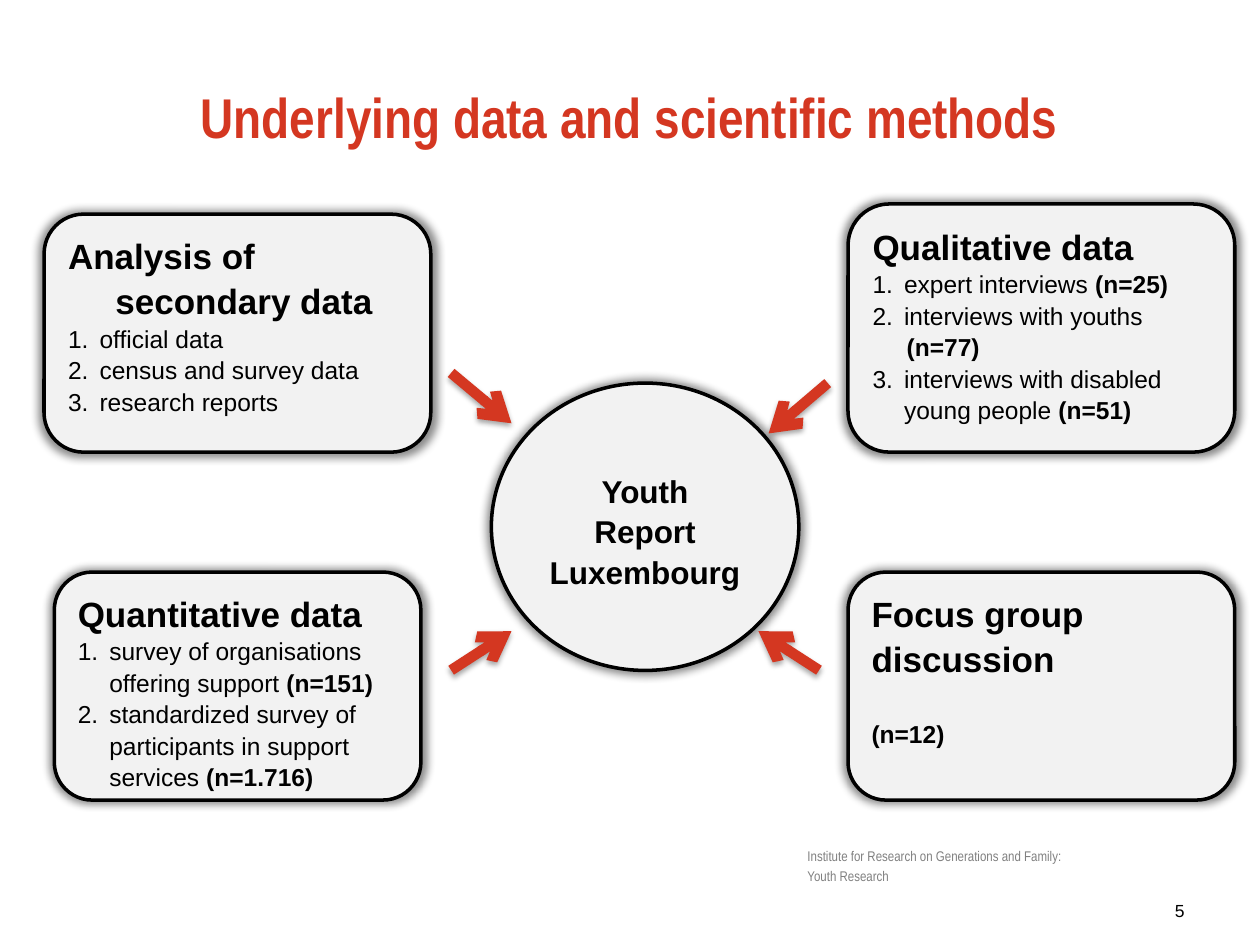
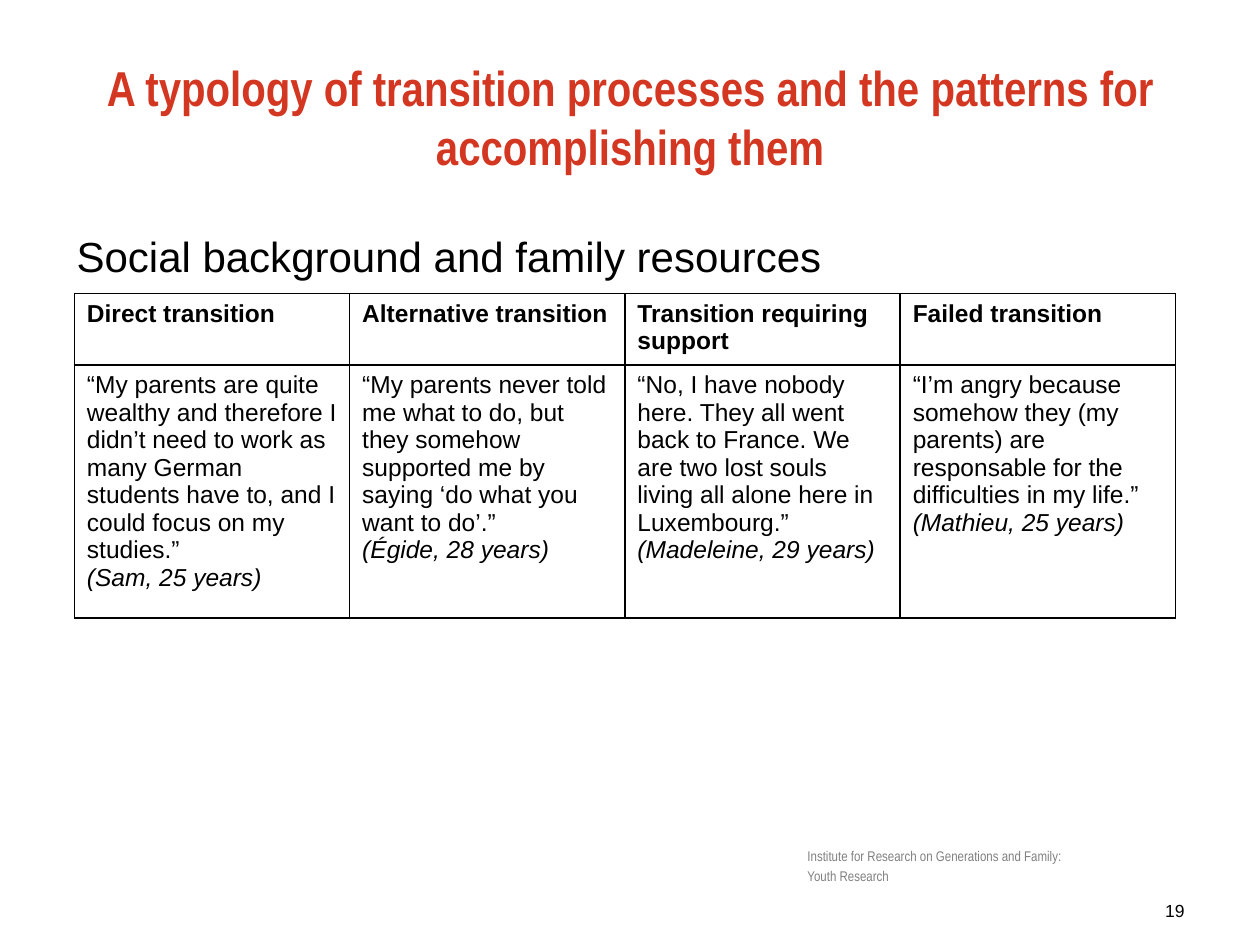
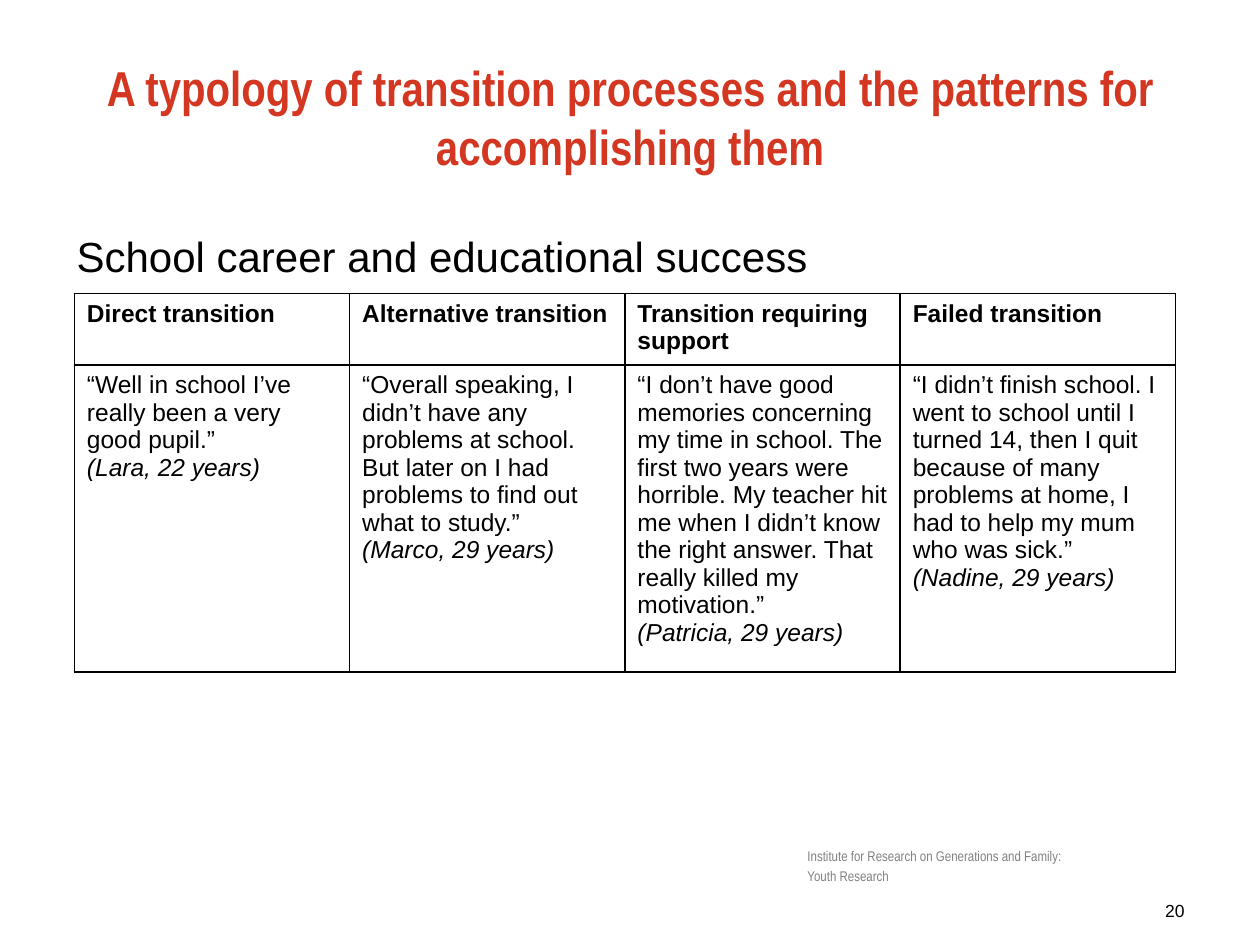
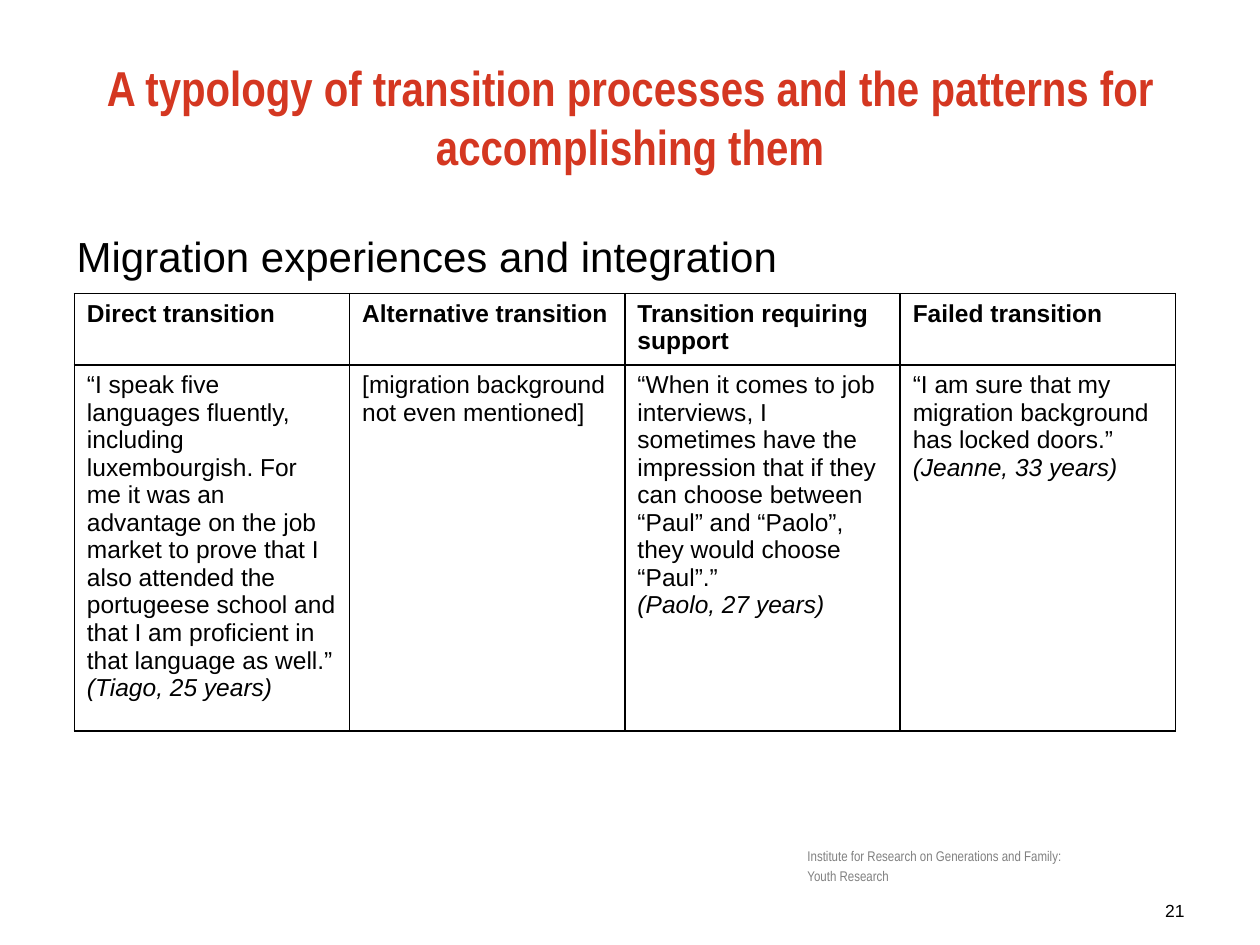
from lxml import etree
from pptx import Presentation
from pptx.dml.color import RGBColor
from pptx.enum.shapes import MSO_CONNECTOR as CONNECTOR, MSO_SHAPE as SHAPE
from pptx.enum.text import MSO_ANCHOR as ANCHOR, PP_ALIGN as ALIGN
from pptx.oxml import parse_xml
from pptx.oxml.ns import nsdecls, qn
from pptx.util import Pt

COLORS = {
    "accent": "D43721",
    "panel": "F2F2F2",
    "text": "000000",
    "footer": "808080",
}
BODY_FONT = "Arial"
NARROW_FONT = "Arial Narrow"
LOOSE = 1.07
HANGING = 18

TYPOLOGY_TITLE = "A typology of transition processes and the patterns for accomplishing them"
TRANSITIONS = [
    "Direct transition", "Alternative transition",
    "Transition requiring support", "Failed transition",
]
# Each topic: page number, heading, height of the quote row, (quote, speaker) per transition
TOPICS = [
    (19, "Social background and family resources", 144.5, [
        ("“My parents are quite wealthy and therefore I didn’t need to work as many German "
         "students have to, and I could focus on my studies.”", "(Sam, 25 years)"),
        ("“My parents never told me what to do, but they somehow supported me by saying "
         "‘do what you want to do’.”", "(Égide, 28 years)"),
        ("“No, I have nobody here. They all went back to France. We are two lost souls "
         "living all alone here in Luxembourg.”", "(Madeleine, 29 years)"),
        ("“I’m angry because somehow they (my parents) are responsable for the "
         "difficulties in my life.”", "(Mathieu, 25 years)"),
    ]),
    (20, "School career and educational success", 164.5, [
        ("“Well in school I’ve really been a very good pupil.”", "(Lara, 22 years)"),
        ("“Overall speaking, I didn’t have any problems at school. But later on I had "
         "problems to find out what to study.”", "(Marco, 29 years)"),
        ("“I don’t have good memories concerning my time in school. The first two years "
         "were horrible. My teacher hit me when I didn’t know the right answer. That "
         "really killed my motivation.”", "(Patricia, 29 years)"),
        ("“I didn’t finish school. I went to school until I turned 14, then I quit because "
         "of many problems at home, I had to help my mum who was sick.”",
         "(Nadine, 29 years)"),
    ]),
    (21, "Migration experiences and integration", 196, [
        ("“I speak five languages fluently, including luxembourgish. For me it was an "
         "advantage on the job market to prove that I also attended the portugeese school "
         "and that I am proficient in that language as well.”", "(Tiago, 25 years)"),
        ("[migration background not even mentioned]", ""),
        ("“When it comes to job interviews, I sometimes have the impression that if they "
         "can choose between “Paul” and “Paolo”, they would choose “Paul”.”",
         "(Paolo, 27 years)"),
        ("“I am sure that my migration background has locked doors.”",
         "(Jeanne, 33 years)"),
    ]),
]


def rgb(name):
    return RGBColor.from_string(COLORS[name])


def add_text(frame, text, size=14, font=BODY_FONT, color="text", bold=False, italic=False,
             bold_end="", align=ALIGN.LEFT, spacing=None, before=None, left=0, first=0,
             number=None):
    """Add a paragraph; bold_end is a closing bold run, number starts automatic numbering."""
    paragraph = frame.add_paragraph() if frame.text else frame.paragraphs[0]
    paragraph.alignment = align
    paragraph.line_spacing = spacing
    if before:
        paragraph.space_before = Pt(before)
    properties = paragraph._p.get_or_add_pPr()
    properties.set("marL", str(Pt(left)))
    properties.set("indent", str(Pt(first)))
    if number:
        etree.SubElement(properties, qn("a:buAutoNum"),
                         type="arabicPeriod", startAt=str(number))
    for part, is_bold in ((text, bold), (bold_end, True)):
        if part:
            run = paragraph.add_run()
            run.text = part
            run.font.size = Pt(size)
            run.font.name = font
            run.font.bold = is_bold
            run.font.italic = italic
            run.font.color.rgb = rgb(color)


def add_item(frame, text, bold_end="", number=1):
    add_text(frame, text, bold_end=bold_end, number=number, spacing=LOOSE,
             left=HANGING, first=-HANGING)


def add_frame(slide, left, top, width, height, anchor=ANCHOR.TOP):
    box = slide.shapes.add_textbox(Pt(left), Pt(top), Pt(width), Pt(height))
    frame = box.text_frame
    frame.word_wrap = True
    frame.vertical_anchor = anchor
    return frame


def add_shadow(shape, blur, distance, opacity, scale=100):
    properties = shape._element.spPr
    for effects in properties.findall(qn("a:effectLst")):
        properties.remove(effects)
    properties.append(parse_xml(
        f'<a:effectLst {nsdecls("a")}><a:outerShdw blurRad="{Pt(blur)}" '
        f'dist="{Pt(distance)}" dir="5400000" sx="{scale * 1000}" sy="{scale * 1000}" '
        f'algn="ctr" rotWithShape="0"><a:srgbClr val="{COLORS["text"]}">'
        f'<a:alpha val="{opacity * 1000}"/></a:srgbClr></a:outerShdw></a:effectLst>'))


def add_panel(slide, left, top, width, height, kind=SHAPE.ROUNDED_RECTANGLE):
    """Add an outlined grey shape and return its text frame."""
    panel = slide.shapes.add_shape(kind, Pt(left), Pt(top), Pt(width), Pt(height))
    panel.fill.solid()
    panel.fill.fore_color.rgb = rgb("panel")
    panel.line.color.rgb = rgb("text")
    panel.line.width = Pt(2)
    add_shadow(panel, blur=5, distance=0, opacity=45, scale=102)
    frame = panel.text_frame
    frame.word_wrap = True
    frame.vertical_anchor = ANCHOR.TOP
    return frame


def add_data_panel(slide, heading, *place, left=0, first=0):
    frame = add_panel(slide, *place)
    add_text(frame, heading, size=20, bold=True, spacing=LOOSE, left=left, first=first)
    return frame


def add_arrow(slide, start, end):
    arrow = slide.shapes.add_connector(CONNECTOR.STRAIGHT, *map(Pt, start + end))
    arrow.line.color.rgb = rgb("accent")
    arrow.line.width = Pt(6)
    etree.SubElement(arrow.line._get_or_add_ln(), qn("a:tailEnd"), type="arrow")
    add_shadow(arrow, blur=3.1, distance=1.8, opacity=35)


def add_slide(presentation, title, title_size, page):
    """Add a slide with the shared footer, title and page number."""
    slide = presentation.slides.add_slide(presentation.slide_layouts[6])
    footer = add_frame(slide, 454.3, 479.5, 188.6, 36.7)
    for line in ("Institute for Research on Generations and Family:", "Youth Research"):
        add_text(footer, line, size=8, font=NARROW_FONT, color="footer", spacing=1.15)
    heading = add_frame(slide, 36, 21.6, 648, 90, ANCHOR.MIDDLE)
    add_text(heading, title, size=title_size, font=NARROW_FONT, color="accent",
             bold=True, align=ALIGN.CENTER)
    add_text(add_frame(slide, 516.2, 510.5, 167.8, 23.8), str(page), size=10,
             align=ALIGN.RIGHT)
    return slide


def format_cell(cell):
    cell.fill.background()
    properties = cell._tc.get_or_add_tcPr()
    for index, side in enumerate("LRTB"):
        properties.insert(index, parse_xml(
            f'<a:ln{side} {nsdecls("a")} w="{Pt(1)}"><a:solidFill>'
            f'<a:srgbClr val="{COLORS["text"]}"/></a:solidFill></a:ln{side}>'))


def add_quote_table(slide, quotes, quote_height):
    heights = (38.5, quote_height)
    graphic = slide.shapes.add_table(2, len(TRANSITIONS), Pt(42.5), Pt(167.8),
                                     Pt(629.2), Pt(sum(heights)))
    table = graphic.table
    table.first_row = table.horz_banding = False
    for row, height in zip(table.rows, heights):
        row.height = Pt(height)
    for column, (transition, (quote, speaker)) in enumerate(zip(TRANSITIONS, quotes)):
        header, body = table.cell(0, column), table.cell(1, column)
        add_text(header.text_frame, transition, bold=True)
        add_text(body.text_frame, quote)
        if speaker:
            add_text(body.text_frame, speaker, italic=True)
        format_cell(header)
        format_cell(body)


def add_methods_slide(presentation):
    slide = add_slide(presentation, "Underlying data and scientific methods", 32, 5)

    secondary = add_data_panel(slide, "Analysis of secondary data", 25.2, 122.4, 221, 136,
                               left=27, first=-27)
    for source in ("official data", "census and survey data", "research reports"):
        add_item(secondary, source)

    focus_group = add_data_panel(slide, "Focus group discussion", 484.6, 326.9, 221, 130.3)
    add_text(focus_group, "(n=12)", bold=True, spacing=LOOSE, before=21.6)

    quantitative = add_data_panel(slide, "Quantitative data", 31, 326.9, 209.5, 130.3)
    add_item(quantitative, "survey of organisations offering support ", "(n=151)")
    add_item(quantitative, "standardized survey of participants in support services ",
             "(n=1.716)")

    qualitative = add_data_panel(slide, "Qualitative data", 484.6, 116.6, 221, 141.8)
    add_item(qualitative, "expert interviews ", "(n=25)")
    add_item(qualitative, "interviews with youths")
    add_text(qualitative, "(n=77)", bold=True, spacing=LOOSE, left=19.5)
    add_item(qualitative, "interviews with disabled young people ", "(n=51)", number=3)

    report = add_panel(slide, 280.8, 218.9, 175.7, 164.2, SHAPE.OVAL)
    report.margin_top = Pt(25.2)
    for line in ("Youth Report", "Luxembourg"):
        add_text(report, line, size=18, bold=True, align=ALIGN.CENTER, spacing=LOOSE)

    for start, end in (
        ((473, 218.9), (439.2, 247.7)),
        ((257.8, 213.1), (292.3, 241.9)),
        ((257.8, 383), (292.3, 360.7)),
        ((468, 383), (433.4, 360.7)),
    ):
        add_arrow(slide, start, end)


def add_topic_slide(presentation, page, topic, quote_height, quotes):
    slide = add_slide(presentation, TYPOLOGY_TITLE, 28, page)
    add_text(add_frame(slide, 36.7, 126, 657.4, 356.4), topic, size=24, spacing=LOOSE)
    add_quote_table(slide, quotes, quote_height)


def main():
    presentation = Presentation()
    presentation.slide_width, presentation.slide_height = Pt(720), Pt(540)
    add_methods_slide(presentation)
    for topic in TOPICS:
        add_topic_slide(presentation, *topic)
    presentation.save("out.pptx")


if __name__ == "__main__":
    main()
